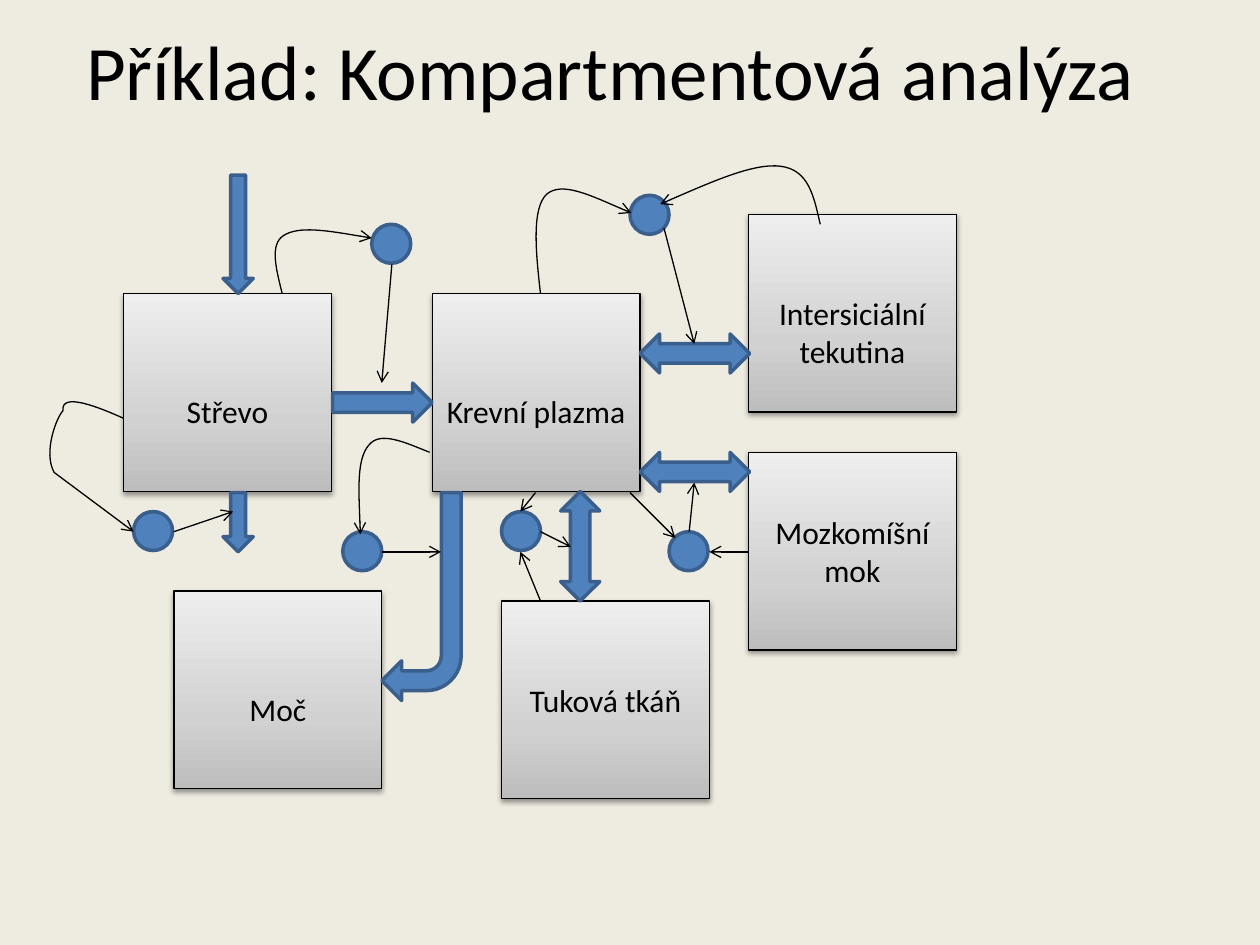
from collections import namedtuple
from copy import deepcopy

from lxml.etree import SubElement, Element
from pptx import Presentation
from pptx.dml.color import RGBColor
from pptx.enum.shapes import MSO_CONNECTOR, MSO_SHAPE as Preset
from pptx.enum.text import MSO_ANCHOR, PP_ALIGN
from pptx.oxml.ns import qn
from pptx.util import Inches, Pt

Box = namedtuple("Box", "left top width height")

COLOURS = {
    "background": "EEECE1",
    "ink": "000000",
    "flow": "4F81BD",
    "flow edge": "3A5F8C",
    "low": "BDBDBD",
    "middle": "D1D1D1",
    "high": "EEEEEE",
}
FONT = "Calibri"
COMPARTMENT_SIZE = (1.65, 1.57)
REGULATOR_SIZE = 0.31
LOWERED_TEXT = 0.35
CENTRED_TEXT = 0.05

COMPARTMENTS = [
    ("Střevo", 0.98, 1.33, LOWERED_TEXT),
    ("Moč", 1.38, 3.69, LOWERED_TEXT),
    ("Krevní plazma", 3.43, 1.33, LOWERED_TEXT),
    ("Intersiciální tekutina", 5.94, 0.7, LOWERED_TEXT),
    ("Tuková tkáň", 3.98, 3.77, CENTRED_TEXT),
    ("Mozkomíšní mok", 5.94, 2.59, CENTRED_TEXT),
]
FLOWS = [
    (Preset.RIGHT_ARROW, Box(2.64, 2.04, 0.79, 0.31), 0),
    (Preset.LEFT_RIGHT_ARROW, Box(5.08, 1.65, 0.87, 0.31), 0),
    (Preset.LEFT_RIGHT_ARROW, Box(5.08, 2.59, 0.87, 0.31), 0),
    (Preset.LEFT_RIGHT_ARROW, Box(4.17, 3.18, 0.87, 0.31), 270),
    (Preset.BENT_ARROW, Box(3.03, 2.91, 0.63, 1.65), 180),
    (Preset.DOWN_ARROW, Box(1.77, 0.39, 0.24, 0.94), 0),
    (Preset.DOWN_ARROW, Box(1.77, 2.91, 0.24, 0.47), 0),
]
REGULATORS = [(2.95, 0.78), (5, 0.55), (5.31, 3.22),
              (2.72, 3.22), (3.98, 3.06), (1.06, 3.06)]
CURVED_SIGNALS = [
    [(2.24, 1.33), (2.19, 1.13), (2.14, 0.94), (2.25, 0.87),
     (2.37, 0.79), (2.66, 0.84), (2.95, 0.89)],
    [(4.29, 1.33), (4.25, 0.99), (4.22, 0.65), (4.34, 0.54),
     (4.46, 0.44), (4.73, 0.57), (5.01, 0.69)],
    [(6.51, 0.78), (6.46, 0.56), (6.42, 0.35), (6.2, 0.32),
     (5.99, 0.29), (5.61, 0.46), (5.24, 0.62)],
    [(3.41, 2.59), (3.21, 2.51), (3.02, 2.42), (2.93, 2.53),
     (2.83, 2.64), (2.85, 2.94), (2.86, 3.24)],
    [(0.98, 2.32), (0.78, 2.23), (0.48, 2.11), (0.5, 2.26),
     (0.45, 2.31), (0.34, 2.59), (0.43, 2.75), (1.06, 3.22)],
]
STRAIGHT_SIGNALS = [
    ((3.11, 1.1), (3.03, 2.04)),
    ((5.27, 0.81), (5.51, 1.73)),
    ((4.29, 3.77), (4.13, 3.38)),
    ((4.25, 2.91), (4.13, 3.06)),
    ((4.29, 3.22), (4.53, 3.34)),
    ((3.03, 3.38), (3.5, 3.38)),
    ((5.94, 3.38), (5.63, 3.38)),
    ((5, 2.91), (5.36, 3.27)),
    ((5.47, 3.22), (5.51, 2.83)),
    ((1.38, 3.22), (1.85, 3.06)),
]


def colour(name):
    """Return the named colour."""
    return RGBColor.from_string(COLOURS[name])


def write(frame, text, size):
    """Put centred text in a frame."""
    frame.word_wrap = True
    frame.vertical_anchor = MSO_ANCHOR.MIDDLE
    paragraph = frame.paragraphs[0]
    paragraph.text = text
    paragraph.alignment = PP_ALIGN.CENTER
    font = paragraph.runs[0].font
    font.name, font.size = FONT, Pt(size)
    font.color.rgb = colour("ink")


def outline(part, name, width):
    """Give a part a solid outline."""
    part.line.color.rgb = colour(name)
    part.line.width = Pt(width)


def place(slide, preset, area, spot):
    """Add a preset shape at a spot relative to the area."""
    return slide.shapes.add_shape(
        preset, Inches(area.left + spot.left), Inches(area.top + spot.top),
        Inches(spot.width), Inches(spot.height))


def add_title(slide, area):
    """Write the heading in its area."""
    heading = slide.shapes.add_textbox(*map(Inches, area))
    write(heading.text_frame, "Příklad: Kompartmentová analýza", 44)


def shade(compartment):
    """Give a compartment its grey gradient and soft shadow."""
    fill = compartment.fill
    fill.gradient()
    fill.gradient_angle = 90
    properties = compartment._element.spPr
    stops = properties.find(".//" + qn("a:gsLst"))
    stops.append(deepcopy(stops[0]))
    tones = [(0, "low"), (0.35, "middle"), (1, "high")]
    for stop, (position, tone) in zip(fill.gradient_stops, tones):
        stop.position = position
        stop.color.rgb = colour(tone)
    compartment.shadow.inherit = False
    effects = properties.find(qn("a:effectLst"))
    shadow = SubElement(effects, qn("a:outerShdw"), blurRad=str(Pt(3.1)),
                        dist=str(Pt(1.6)), dir="5400000", rotWithShape="0")
    black = SubElement(shadow, qn("a:srgbClr"), val=COLOURS["ink"])
    SubElement(black, qn("a:alpha"), val="38000")


def add_compartments(slide, area):
    """Place the labelled compartments."""
    for name, left, top, inset in COMPARTMENTS:
        compartment = place(slide, Preset.RECTANGLE, area,
                            Box(left, top, *COMPARTMENT_SIZE))
        outline(compartment, "ink", 0.75)
        shade(compartment)
        write(compartment.text_frame, name, 18)
        compartment.text_frame.margin_top = Inches(inset)


def add_flows(slide, area):
    """Place the block arrows and the round regulators."""
    regulators = [(Preset.OVAL, Box(*spot, REGULATOR_SIZE, REGULATOR_SIZE), 0)
                  for spot in REGULATORS]
    for preset, spot, turn in FLOWS + regulators:
        flow = place(slide, preset, area, spot)
        flow.rotation = turn
        flow.shadow.inherit = False
        flow.fill.solid()
        flow.fill.fore_color.rgb = colour("flow")
        outline(flow, "flow edge", 2)


def finish_signal(signal):
    """Make a signal a thin black line with an open arrowhead."""
    outline(signal, "ink", 0.75)
    SubElement(signal.line._get_or_add_ln(), qn("a:tailEnd"), type="arrow")


def bend(signal):
    """Turn each three line segments of an outline into one curve."""
    segments = list(signal._element.iter(qn("a:lnTo")))
    for first in range(0, len(segments) - 2, 3):
        group = segments[first:first + 3]
        curve = Element(qn("a:cubicBezTo"))
        group[0].addprevious(curve)
        for segment in group:
            curve.append(segment[0])
            segment.getparent().remove(segment)


def add_signals(slide, area):
    """Draw the curved and straight signals."""
    def locate(point):
        return Inches(area.left + point[0]), Inches(area.top + point[1])

    for points in CURVED_SIGNALS:
        start, *rest = map(locate, points)
        builder = slide.shapes.build_freeform(*start)
        builder.add_line_segments(rest, close=False)
        signal = builder.convert_to_shape()
        bend(signal)
        signal.fill.background()
        signal.shadow.inherit = False
        finish_signal(signal)
    for start, end in STRAIGHT_SIGNALS:
        signal = slide.shapes.add_connector(
            MSO_CONNECTOR.STRAIGHT, *locate(start), *locate(end))
        finish_signal(signal)
        SubElement(signal._element.spPr, qn("a:effectLst"))


def main():
    """Build the slide and save it."""
    deck = Presentation()
    deck.slide_width, deck.slide_height = Inches(10), Inches(7.5)
    slide = deck.slides.add_slide(deck.slide_layouts[6])
    slide.background.fill.solid()
    slide.background.fill.fore_color.rgb = colour("background")
    add_title(slide, Box(0.35, 0, 8.99, 1.1))
    diagram = Box(0, 1, 10, 6.5)
    for add_layer in (add_compartments, add_flows, add_signals):
        add_layer(slide, diagram)
    deck.save("out.pptx")


if __name__ == "__main__":
    main()
